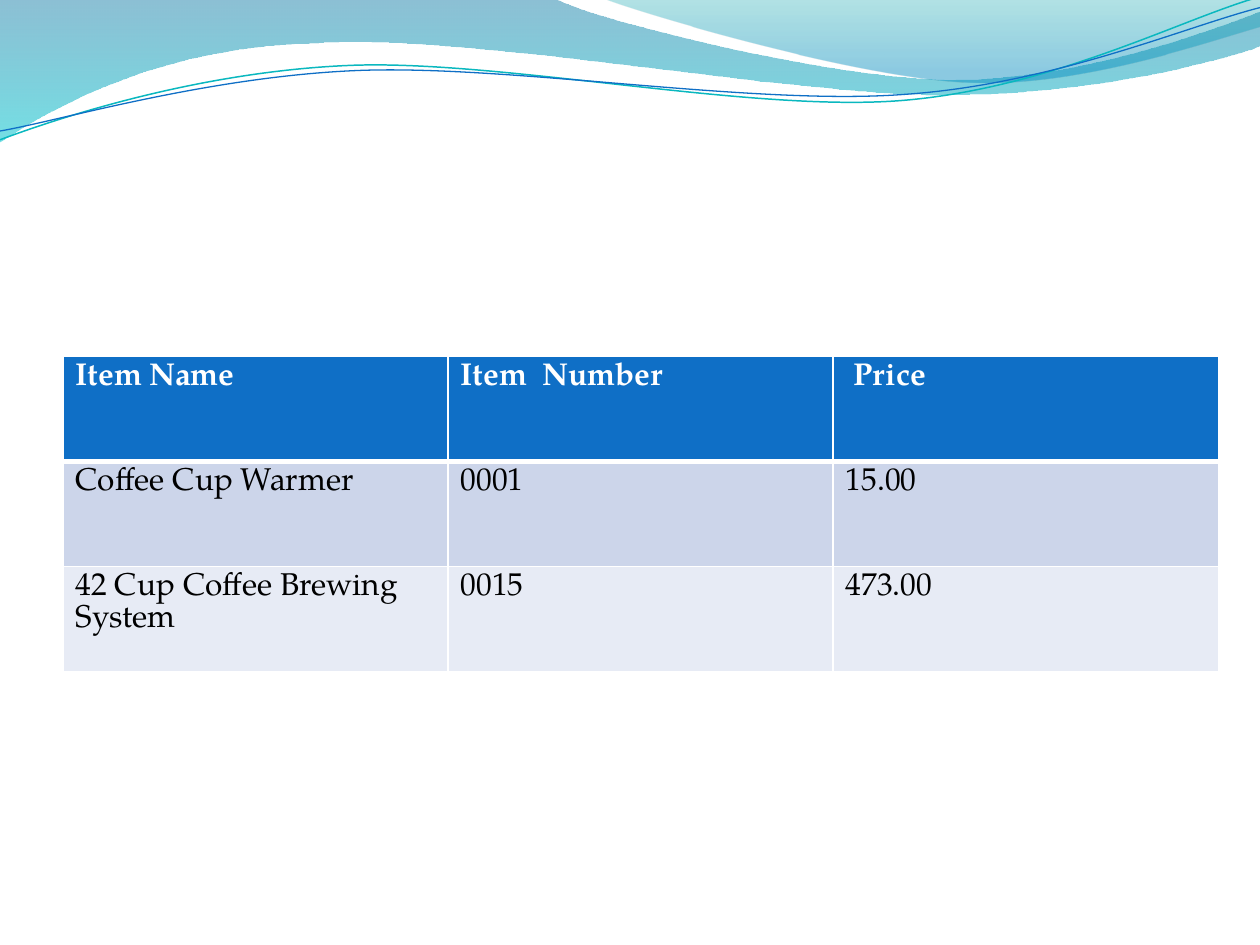
from dataclasses import dataclass
from math import cos, radians, sin

from lxml.etree import SubElement
from pptx import Presentation
from pptx.dml.color import RGBColor
from pptx.oxml.ns import qn
from pptx.util import Inches, Pt


@dataclass(frozen=True)
class Theme:
    font: str = "TeX Gyre Pagella"
    size: int = 18
    header: str = "0F6FC6"
    bands: tuple = ("CCD5EA", "E7EBF5")
    white: str = "FFFFFF"
    black: str = "000000"
    teal: str = "0AB8BF"
    # Gradient stops: position, colour, opacity in percent
    wide_wave: tuple = ((0, "0074A1", 45), (1, "00C6CF", 55))
    corner_wave: tuple = ((0, "00A1A9", 30), (0.8, "008BBF", 45))


THEME = Theme()
LINE_TILT = 357.3

# Boxes are left, top, width, height in inches from the header's corner.
# Each outline is a start point, then line ends (2 numbers) or cubic curves (6).
WIDE_BOX = (-0.01, -0.01, 10.02, 1.14)
WIDE_WAVE = [
    (0, 0), (4.4, -0.01),
    (4.76, 0.17, 6.64, 0.63, 7.58, 0.63), (8.53, 0.63, 9.58, 0.26, 10, 0.09),
    (10.01, 0.36),
    (9.83, 0.44, 8.7, 0.76, 7.46, 0.75), (6.22, 0.75, 3.82, 0.28, 2.57, 0.34),
    (1.29, 0.36, 0.46, 0.83, -0.01, 1.13), (0, 0),
]
CORNER_BOX = (4.79, -0.01, 5.21, 0.7)
CORNER_WAVE = [
    (4.79, -0.01),
    (5.09, 0.11, 6.82, 0.62, 7.69, 0.65), (8.56, 0.69, 9.61, 0.32, 10, 0.21),
    (10, 0), (4.79, -0.01),
]
TEAL_BOX = (-0.02, 0.22, 10.02, 0.71)
TEAL_LINE = [
    (0, 1.11),
    (0.48, 0.93, 1.58, 0.57, 2.77, 0.52), (3.95, 0.47, 5.93, 0.89, 7.13, 0.8),
    (8.33, 0.71, 9.38, 0.15, 9.98, -0.02),
]
BLUE_BOX = (-0.02, 0.3, 10.03, 0.58)
BLUE_LINE = [
    (0, 1.04),
    (0.47, 0.96, 1.64, 0.61, 2.83, 0.56), (4.03, 0.51, 5.97, 0.84, 7.17, 0.75),
    (8.36, 0.67, 9.41, 0.21, 10, 0.06),
]

ROWS = [
    ("Item Name", "Item  Number", " Price"),
    ("Coffee Cup Warmer", "0001", "15.00"),
    ("42 Cup Coffee Brewing System", "0015", "473.00"),
]


def rgb(color):
    return RGBColor.from_string(color)


def add_outline(slide, left, top, box, outline, tilt=0, close=False):
    """Add a curved freeform filling box; its points are as seen after the tilt."""
    x, y, w, h = box
    x0, y0 = left + Inches(x), top + Inches(y)
    x1, y1 = x0 + Inches(w), y0 + Inches(h)
    builder = slide.shapes.build_freeform(x0, y0, scale=1.0)
    builder.add_line_segments([(x1, y0), (x1, y1), (x0, y1)], close=close)
    sp = builder.convert_to_shape()
    sp.shadow.inherit = False
    sp.rotation = tilt

    turn = radians(-tilt)
    route = next(sp._element.iter(qn("a:path")))
    for child in list(route):
        route.remove(child)
    for index, part in enumerate(outline):
        tag = "a:moveTo" if index == 0 else "a:lnTo" if len(part) == 2 else "a:cubicBezTo"
        step = SubElement(route, qn(tag))
        for px, py in zip(part[::2], part[1::2]):
            dx, dy = px - x - w / 2, py - y - h / 2
            SubElement(step, qn("a:pt"),
                       x=str(Inches(w / 2 + dx * cos(turn) - dy * sin(turn))),
                       y=str(Inches(h / 2 + dx * sin(turn) + dy * cos(turn))))
    if close:
        SubElement(route, qn("a:close"))
    return sp


def add_wave(slide, left, top, box, outline, stops):
    sp = add_outline(slide, left, top, box, outline, close=True)
    sp.line.fill.background()
    sp.fill.gradient()
    sp.fill.gradient_angle = 270
    for stop, (position, color, _) in zip(sp.fill.gradient_stops, stops):
        stop.position = position
        stop.color.rgb = rgb(color)
    for clr, (_, _, opacity) in zip(sp._element.spPr.iter(qn("a:srgbClr")), stops):
        SubElement(clr, qn("a:alpha"), val=str(opacity * 1000))


def add_wave_line(slide, left, top, box, outline, color, width):
    sp = add_outline(slide, left, top, box, outline, tilt=LINE_TILT)
    sp.fill.background()
    sp.line.color.rgb = rgb(color)
    sp.line.width = Pt(width)


def add_wave_header(slide, left, top):
    add_wave(slide, left, top, WIDE_BOX, WIDE_WAVE, THEME.wide_wave)
    add_wave(slide, left, top, CORNER_BOX, CORNER_WAVE, THEME.corner_wave)
    add_wave_line(slide, left, top, TEAL_BOX, TEAL_LINE, THEME.teal, 0.85)
    add_wave_line(slide, left, top, BLUE_BOX, BLUE_LINE, THEME.header, 0.75)


def set_borders(cell, widths):
    """Draw white borders; widths are points for left, right, top, bottom."""
    tcPr = cell._tc.get_or_add_tcPr()
    for index, (side, width) in enumerate(zip("LRTB", widths)):
        ln = tcPr.makeelement(qn(f"a:ln{side}"), {"w": str(Pt(width))})
        fill = SubElement(ln, qn("a:solidFill"))
        SubElement(fill, qn("a:srgbClr"), val=THEME.white)
        tcPr.insert(index, ln)


def add_price_table(slide, left, top, width, height):
    table = slide.shapes.add_table(
        len(ROWS), len(ROWS[0]), left, top, width, height).table
    for r, row in enumerate(ROWS):
        is_header = r == 0
        fill = THEME.header if is_header else THEME.bands[(r - 1) % 2]
        for c, text in enumerate(row):
            cell = table.cell(r, c)
            cell.text = text
            cell.fill.solid()
            cell.fill.fore_color.rgb = rgb(fill)
            font = cell.text_frame.paragraphs[0].font
            font.name = THEME.font
            font.size = Pt(THEME.size)
            font.bold = is_header
            font.color.rgb = rgb(THEME.white if is_header else THEME.black)
            set_borders(cell, (1, 1, 3 if r == 1 else 1, 3 if is_header else 1))


def main():
    prs = Presentation()
    prs.slide_width, prs.slide_height = Inches(10), Inches(7.5)
    slide = prs.slides.add_slide(prs.slide_layouts[6])
    add_wave_header(slide, Inches(0), Inches(0))
    add_price_table(slide, Inches(0.5), Inches(2.83), Inches(9.17), Inches(2.5))
    prs.save("out.pptx")


if __name__ == "__main__":
    main()
